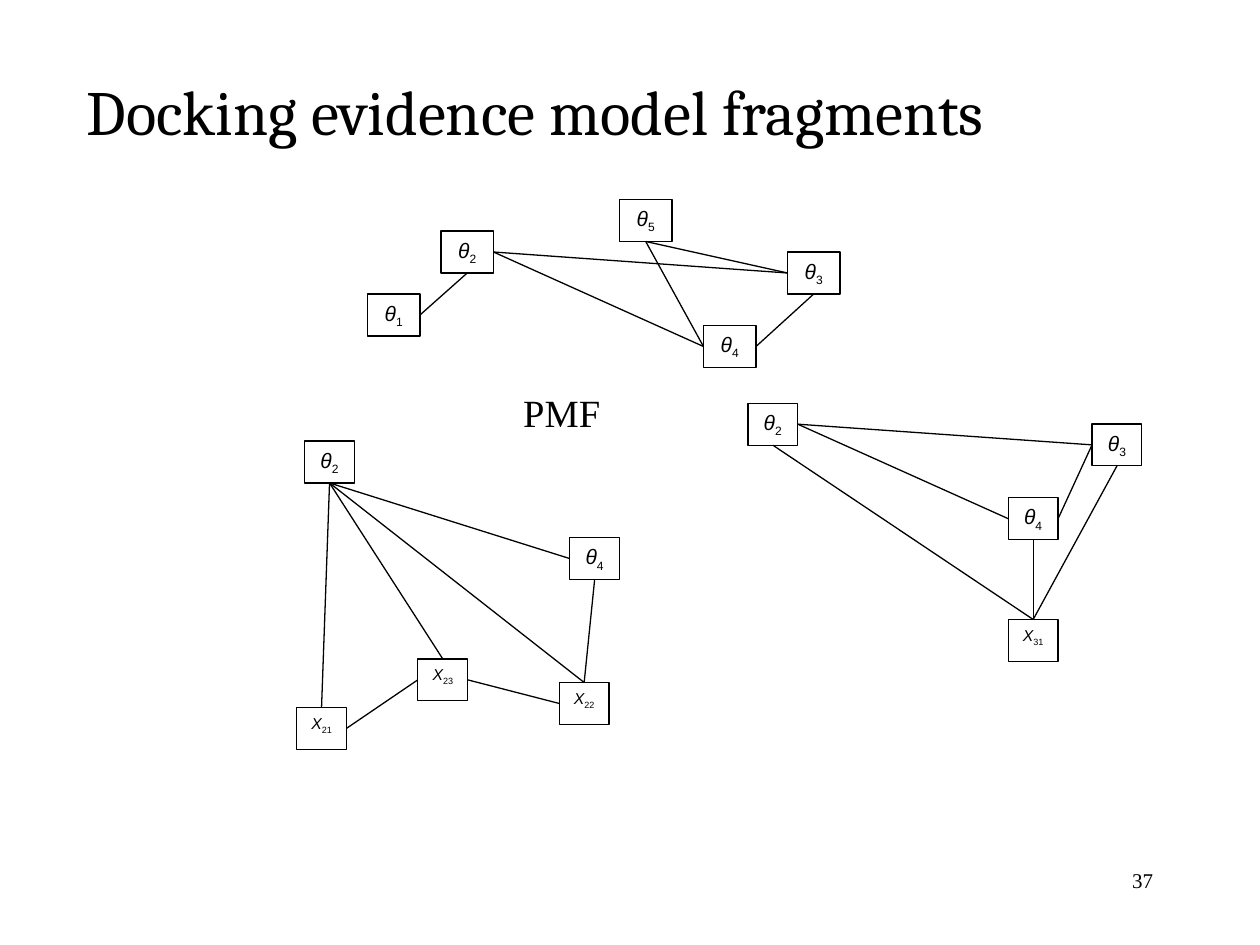
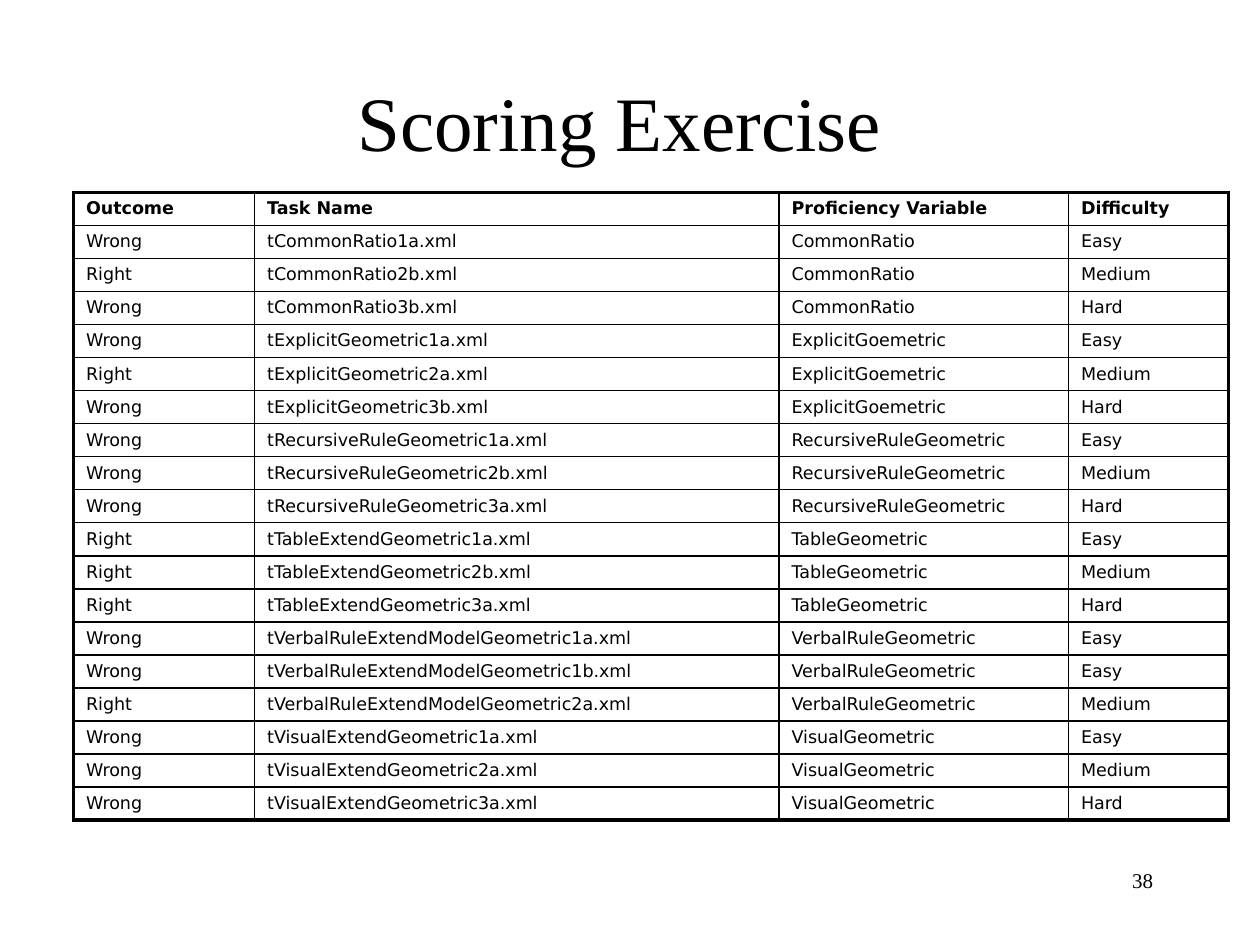
from dataclasses import dataclass
from lxml.etree import SubElement as Sub
from pptx import Presentation
from pptx.dml.color import RGBColor as Rgb
from pptx.enum.shapes import MSO_CONNECTOR as Link, MSO_SHAPE as Shape
from pptx.enum.text import MSO_ANCHOR as Anchor, PP_ALIGN as Align
from pptx.oxml.ns import qn
from pptx.util import Inches, Pt


@dataclass(frozen=True)
class Theme:
    ink: str = "000000"
    paper: str = "FFFFFF"
    serif: str = "Times New Roman"
    head: str = "Cambria"
    sans: str = "Arial"
    grid: str = "DejaVu Sans"
    big: float = 44
    title: float = 36
    label: float = 22
    theta: float = 12
    obs: float = 9
    page: float = 12
    cell: float = 10
    line: float = 0.75
    rule: float = 1
    frame: float = 2.25


LOOK = Theme()
COLS, ROWS = 120, 90
WIDE, HIGH = Inches(10), Inches(7.5)
TOP, LEFT, BASE, RIGHT = range(4)
NODE_W, NODE_H = 5, 4
PADS = {"margin_top": Inches(0.05), "margin_bottom": Inches(0.04)}

MODEL = {
    "box": (35, 19), "step": 1,
    "nodes": {"θ2": (7, 3), "θ1": (0, 9), "θ3": (40, 5), "θ4": (32, 12), "θ5": (24, 0)},
    "links": [("θ2", BASE, "θ1", RIGHT), ("θ5", BASE, "θ4", LEFT),
              ("θ3", BASE, "θ4", RIGHT), ("θ4", LEFT, "θ2", RIGHT),
              ("θ2", RIGHT, "θ3", LEFT), ("θ3", LEFT, "θ5", BASE)],
}
TRIPLE = {
    "box": (28.25, 42), "step": 0.95,
    "nodes": {"X21": (0, 25.37), "X23": (12.15, 20.75), "X22": (26.33, 23),
              "θ2": (0.8, 0), "θ4": (27.38, 9.2)},
    "links": [("θ2", BASE, "X21", TOP), ("θ2", BASE, "X22", TOP),
              ("X23", LEFT, "X21", RIGHT), ("X23", RIGHT, "X22", LEFT),
              ("θ4", BASE, "X22", TOP), ("θ2", BASE, "X23", TOP),
              ("θ2", BASE, "θ4", LEFT)],
}
SINGLE = {
    "box": (71.23, 38.4), "step": 0.95,
    "nodes": {"X31": (26.1, 20.6), "θ3": (34.5, 1.97), "θ2": (0, 0), "θ4": (26.1, 9)},
    "links": [("θ2", BASE, "X31", TOP), ("θ4", BASE, "X31", TOP),
              ("θ3", BASE, "X31", TOP), ("θ2", RIGHT, "θ4", LEFT),
              ("θ4", RIGHT, "θ3", LEFT), ("θ2", RIGHT, "θ3", LEFT)],
}

HEADS = ("Outcome", "Task Name", "Proficiency Variable", "Difficulty")
LEVELS = {"1": "Easy", "2": "Medium", "3": "Hard"}
MARKS = {"W": "Wrong", "R": "Right"}
TASKS = [
    ("CommonRatio", "CommonRatio", "W1a R2b W3b"),
    ("ExplicitGeometric", "ExplicitGoemetric", "W1a R2a W3b"),
    ("RecursiveRuleGeometric", "RecursiveRuleGeometric", "W1a W2b W3a"),
    ("TableExtendGeometric", "TableGeometric", "R1a R2b R3a"),
    ("VerbalRuleExtendModelGeometric", "VerbalRuleGeometric", "W1a W1b R2a"),
    ("VisualExtendGeometric", "VisualGeometric", "W1a W2a W3a"),
]


def place(left, top, *size):
    spots = zip((left, top, *size), (WIDE / COLS, HIGH / ROWS) * 2)
    return [round(value * unit) for value, unit in spots]


def style(item, form):
    for name, value in form.items():
        setattr(item, name, value)


def write(para, text, face, size, **form):
    run = para.add_run()
    run.text = text
    style(run.font, {"name": face, "size": Pt(size), **form})
    run.font.color.rgb = Rgb.from_string(LOOK.ink)
    return run


def label(slide, box, text, face, size, align=Align.LEFT, anchor=Anchor.TOP, space=1):
    frame = slide.shapes.add_textbox(*place(*box)).text_frame
    style(frame, {"word_wrap": True, "vertical_anchor": anchor})
    para = frame.paragraphs[0]
    style(para, {"alignment": align, "line_spacing": space})
    write(para, text, face, size)


def number(slide, text):
    label(slide, (86, 82, 25, 6), text, LOOK.serif, LOOK.page, Align.RIGHT)


def pen(item):
    item.line.color.rgb = Rgb.from_string(LOOK.ink)
    item.line.width = Pt(LOOK.line)


def node(group, box, name):
    rect = group.shapes.add_shape(Shape.RECTANGLE, *place(*box))
    rect.shadow.inherit = False
    rect.fill.solid()
    rect.fill.fore_color.rgb = Rgb.from_string(LOOK.paper)
    pen(rect)
    style(rect.text_frame, {"word_wrap": False, "vertical_anchor": Anchor.TOP})
    para = rect.text_frame.paragraphs[0]
    para.alignment = Align.CENTER
    size = LOOK.theta if name[0] == "θ" else LOOK.obs
    write(para, name[0], LOOK.sans, size, italic=True)
    sub = write(para, name[1:], LOOK.sans, size, italic=False)
    sub.font._element.set("baseline", "-25000")
    return rect


def net(slide, box, step, nodes, links):
    group = slide.shapes.add_group_shape()
    left, top = box
    made = {name: node(group, (left + col * step, top + row, NODE_W * step, NODE_H), name)
            for name, (col, row) in nodes.items()}
    for start, out, end, into in links:
        line = group.shapes.add_connector(Link.STRAIGHT, 0, 0, 0, 0)
        line.begin_connect(made[start], out)
        line.end_connect(made[end], into)
        pen(line)
        Sub(line._element.spPr, qn("a:effectLst"))


def edge(cell, widths):
    props = cell._tc.get_or_add_tcPr()
    for side, width in widths.items():
        line = Sub(props, qn(f"a:ln{side}"), w=str(Pt(width)))
        Sub(Sub(line, qn("a:solidFill")), qn("a:srgbClr"), val=LOOK.ink)


def records():
    yield HEADS
    for stem, skill, codes in TASKS:
        for code in codes.split():
            yield MARKS[code[0]], f"t{stem}{code[1:]}.xml", skill, LEVELS[code[1]]


def scores(slide, box, widths, tall):
    data = list(records())
    size = (sum(widths), tall * len(data))
    table = slide.shapes.add_table(len(data), len(widths), *place(*box, *size)).table
    style(table, {"first_row": False, "horz_banding": False})
    for col, width in zip(table.columns, widths):
        col.width = round(width * WIDE / COLS)
    for row in table.rows:
        row.height = round(tall * HIGH / ROWS)
    for r, values in enumerate(data):
        for c, text in enumerate(values):
            cell = table.cell(r, c)
            outer = {"L": c == 0, "R": c == len(widths) - 1,
                     "T": r == 0, "B": r == len(data) - 1}
            edge(cell, {side: LOOK.frame if out else LOOK.rule
                        for side, out in outer.items()})
            cell.fill.background()
            style(cell, PADS)
            write(cell.text_frame.paragraphs[0], text, LOOK.grid, LOOK.cell, bold=r == 0)


def docking(slide):
    net(slide, **MODEL)
    label(slide, (7.08, 3, 112.92, 15), "Docking evidence model fragments",
          LOOK.head, LOOK.title, anchor=Anchor.MIDDLE)
    label(slide, (42, 36, 23, 6), "PMF", LOOK.serif, LOOK.label, Align.CENTER, space=1.1)
    net(slide, **TRIPLE)
    net(slide, **SINGLE)
    number(slide, "37")


def scoring(slide):
    number(slide, "38")
    label(slide, (8, 4, 102, 15), "Scoring Exercise", LOOK.serif, LOOK.big,
          Align.CENTER, Anchor.MIDDLE)
    scores(slide, (7, 18.32), (17.25, 49.95, 27.57, 15.23), 3.15)


def main():
    deck = Presentation()
    style(deck, {"slide_width": WIDE, "slide_height": HIGH})
    for build in (docking, scoring):
        build(deck.slides.add_slide(deck.slide_layouts[6]))
    deck.save("out.pptx")


if __name__ == "__main__":
    main()
